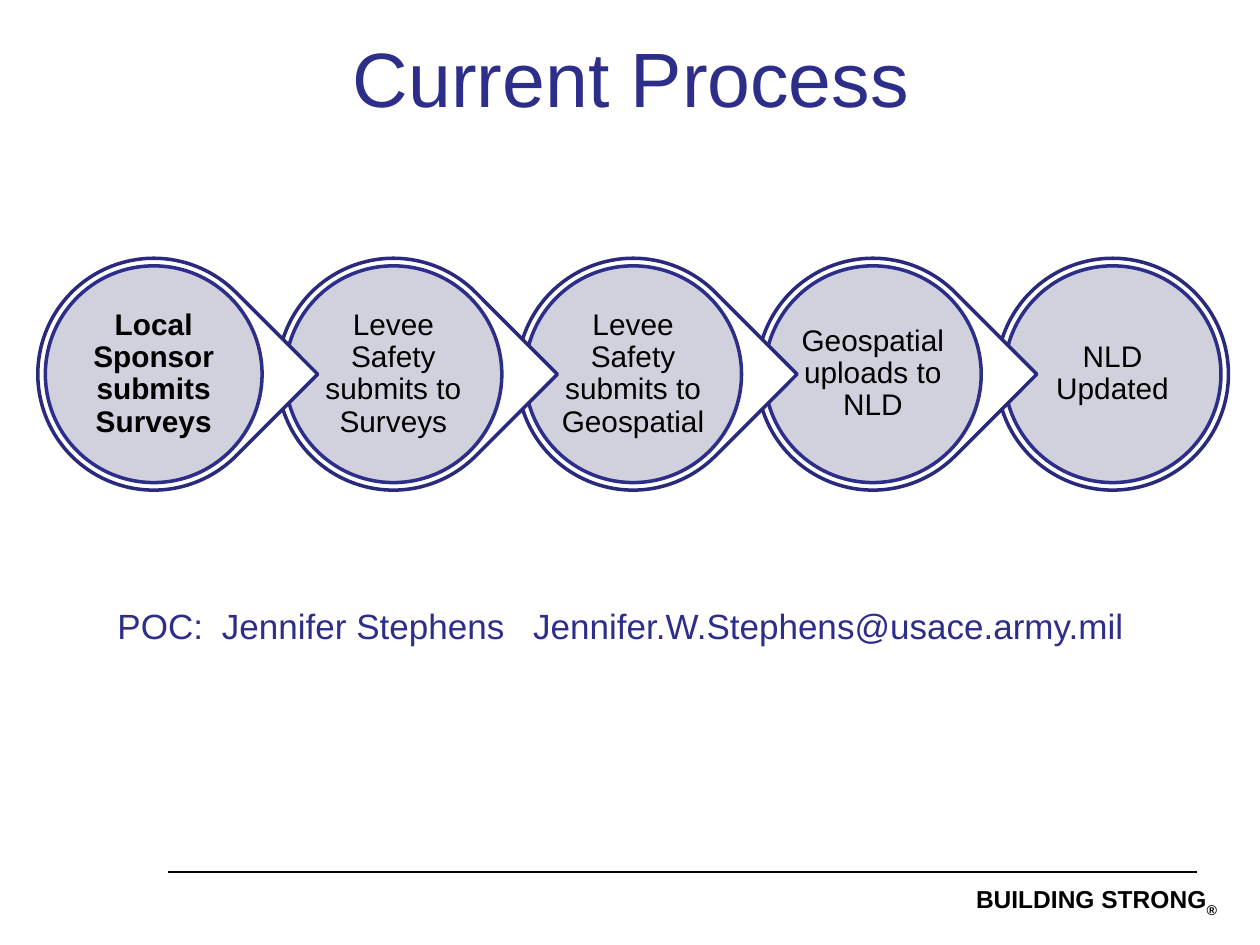
from lxml.etree import SubElement
from pptx import Presentation
from pptx.dml.color import RGBColor
from pptx.enum.shapes import MSO_CONNECTOR, MSO_SHAPE
from pptx.enum.text import MSO_ANCHOR, PP_ALIGN
from pptx.oxml.ns import qn
from pptx.util import Inches, Pt

W, H = 10, 7.5
COLORS = {"navy": "2D2D8A", "rim": "29297D", "disc": "CDCDDA", "white": "FFFFFF", "black": "000000"}
STEPS = [
    "Local Sponsor submits Surveys",
    "Levee Safety submits to Surveys",
    "Levee Safety submits to Geospatial",
    "Geospatial uploads to NLD",
    "NLD Updated",
]


def rgb(name):
    """Return the named colour."""
    return RGBColor.from_string(COLORS[name])


def inches(box):
    """Turn a box in inches into slide lengths."""
    return [Inches(v) for v in box]


def inset(box, gap):
    """Shrink a box by the same gap on every side."""
    x, y, w, h = box
    return x + gap, y + gap, w - 2 * gap, h - 2 * gap


def add_run(p, text, color, **font):
    """Add a run in Arial with the given font values."""
    r = p.add_run()
    r.text = text
    r.font.color.rgb = rgb(color)
    for key, value in {"name": "Arial", **font}.items():
        setattr(r.font, key, value)
    return r


def add_text(shapes, box, margins=(0.1, 0.05), align=PP_ALIGN.LEFT, anchor=MSO_ANCHOR.TOP):
    """Add a wrapped text box and return its first paragraph."""
    tf = shapes.add_textbox(*inches(box)).text_frame
    side, end = inches(margins)
    frame = {"word_wrap": True, "vertical_anchor": anchor, "margin_left": side,
             "margin_right": side, "margin_top": end, "margin_bottom": end}
    for key, value in frame.items():
        setattr(tf, key, value)
    p = tf.paragraphs[0]
    p.alignment = align
    return p


def add_outline(shapes, kind, box, fill, line):
    """Add a filled shape with a two-point outline."""
    sp = shapes.add_shape(kind, *inches(box))
    sp.shadow.inherit = False
    sp.fill.solid()
    sp.fill.fore_color.rgb = rgb(fill)
    sp.line.color.rgb = rgb(line)
    sp.line.width = Pt(2)
    return sp


def add_step(shapes, box, text, first, last):
    """Draw one step: a rim, a translucent disc and its label."""
    rim = add_outline(shapes, MSO_SHAPE.OVAL if last else MSO_SHAPE.TEAR, box, "white", "rim")
    rim.rotation = 0 if last else 45
    disc = add_outline(shapes, MSO_SHAPE.OVAL, inset(box, 0.06), "disc", "navy")
    color = disc.fill._xPr.find(qn("a:solidFill"))[0]
    SubElement(color, qn("a:alpha"), val="90000")
    p = add_text(shapes, inset(box, 0.305), (0.02, 0.02), PP_ALIGN.CENTER, MSO_ANCHOR.MIDDLE)
    p.line_spacing = 0.9
    add_run(p, text, "black", size=Pt(17), bold=first)


def add_chain(slide, box):
    """Spread the steps evenly over the box, right to left so tips overlap."""
    x, y, w, h = box
    shapes = slide.shapes.add_group_shape().shapes
    last = len(STEPS) - 1
    pitch = (w - h) / last
    for i in range(last, -1, -1):
        add_step(shapes, (x + i * pitch, y, h, h), STEPS[i], i == 0, i == last)


def add_title(slide, box):
    """Place the centred slide title."""
    p = add_text(slide.shapes, box, align=PP_ALIGN.CENTER, anchor=MSO_ANCHOR.MIDDLE)
    add_run(p, "Current Process", "navy", size=Pt(44))


def add_contact(slide, box):
    """Place the contact line with its columns on tab stops."""
    p = add_text(slide.shapes, box)
    tabs = SubElement(p._p.get_or_add_pPr(), qn("a:tabLst"))
    for stop in (0.83, 3.3):
        SubElement(tabs, qn("a:tab"), pos=str(Inches(stop)), algn="l")
    add_run(p, "POC:\tJennifer Stephens\tJennifer.W.Stephens@usace.army.mil", "navy", size=Pt(20))


def add_footer(slide, box):
    """Draw the footer rule and the motto below it."""
    x, y, w, h = box
    rule = slide.shapes.add_connector(MSO_CONNECTOR.STRAIGHT, *inches((x + w, y, x, y)))
    rule.line.color.rgb = rgb("black")
    rule.line.width = Pt(0.75)
    SubElement(rule._element.spPr, qn("a:effectLst"))
    motto = (0.681 * W, y + 0.1, 0.285 * W, h - 0.1)
    p = add_text(slide.shapes, motto, (0, 0), PP_ALIGN.RIGHT)
    add_run(p, "BUILDING STRONG", "black", size=Pt(14), bold=True)
    mark = add_run(p, "®", "black", size=Pt(14), bold=True)
    mark.font._element.set("baseline", "-25000")


def main():
    """Build the slide and save it."""
    prs = Presentation()
    prs.slide_width, prs.slide_height = inches((W, H))
    slide = prs.slides.add_slide(prs.slide_layouts[6])
    add_footer(slide, (0.133 * W, 6.92, 0.817 * W, 0.33))
    add_title(slide, (0.051 * W, -0.02, 0.9 * W, H / 6))
    add_chain(slide, (0.03 * W, 2.05, 0.945 * W, 1.84))
    add_contact(slide, (W / 12, 4.75, W * 10 / 12, 0.44))
    prs.save("out.pptx")


if __name__ == "__main__":
    main()
